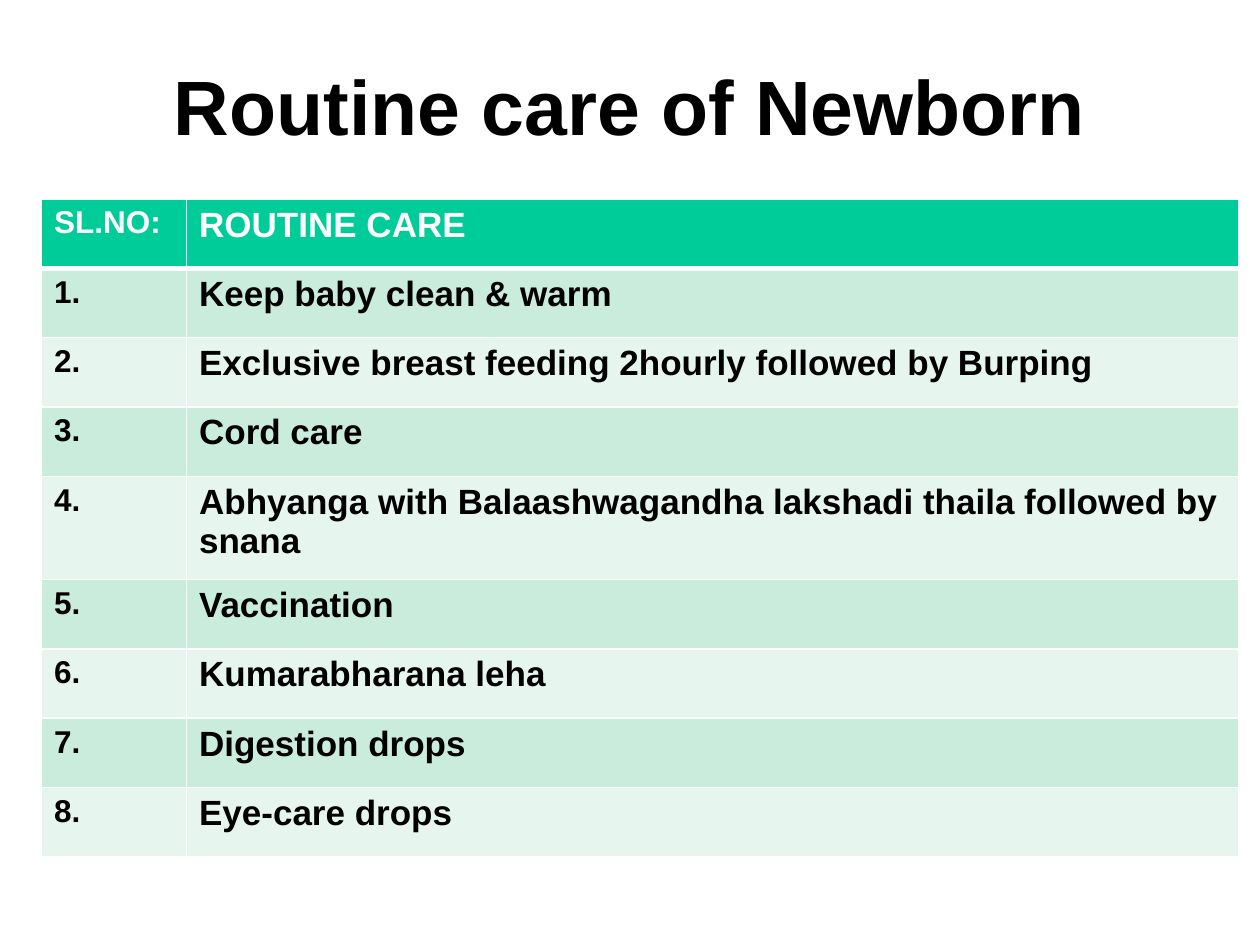
from lxml import etree
from pptx import Presentation
from pptx.dml.color import RGBColor
from pptx.enum.text import MSO_ANCHOR, PP_ALIGN
from pptx.oxml.ns import qn
from pptx.util import Inches, Pt

CENTER = PP_ALIGN.CENTER
MIDDLE = MSO_ANCHOR.MIDDLE

SLIDE_W, SLIDE_H = 10, 7.5
FONT = "Arial"
WHITE, BLACK = "FFFFFF", "000000"
HEADER_GREEN = "00CC99"
BAND_GREENS = ("E6F6EF", "CAECDD")

HEADINGS = ("SL.NO:", "ROUTINE CARE")
CARE_STEPS = (
    "Keep baby clean & warm",
    "Exclusive breast feeding 2hourly followed by Burping",
    "Cord care",
    "Abhyanga with Balaashwagandha lakshadi thaila followed by snana",
    "Vaccination",
    "Kumarabharana leha",
    "Digestion drops",
    "Eye-care drops",
)
TWO_LINE_ROW = 4
ROW_H, TWO_LINE_H = 0.55, 0.82
NUMBER_COL_W = 1.15
COLUMN_SIZES = (18, 20)


def color(hex_value):
    return RGBColor.from_string(hex_value)


def write(frame, text, size, hex_value):
    frame.text = text
    font = frame.paragraphs[0].runs[0].font
    font.name, font.size, font.bold = FONT, Pt(size), True
    font.color.rgb = color(hex_value)


def set_borders(cell, top, bottom):
    """Draw white cell edges; top and bottom are widths in points."""
    properties = cell._tc.get_or_add_tcPr()
    for edge, width in (("L", 1), ("R", 1), ("T", top), ("B", bottom)):
        line = etree.SubElement(properties, qn(f"a:ln{edge}"), w=str(Pt(width)))
        fill = etree.SubElement(line, qn("a:solidFill"))
        etree.SubElement(fill, qn("a:srgbClr"), val=WHITE)


def add_title(slide, left, top, width, height):
    title = slide.shapes.add_textbox(*map(Inches, (left, top, width, height)))
    frame = title.text_frame
    frame.word_wrap = True
    frame.vertical_anchor = MIDDLE
    write(frame, "Routine care of Newborn", 44, BLACK)
    frame.paragraphs[0].alignment = CENTER


def add_care_table(slide, left, top, width):
    rows = [HEADINGS] + [(f"{n}.", step) for n, step in enumerate(CARE_STEPS, 1)]
    heights = [TWO_LINE_H if r == TWO_LINE_ROW else ROW_H for r in range(len(rows))]
    box = map(Inches, (left, top, width, sum(heights)))
    table = slide.shapes.add_table(len(rows), len(HEADINGS), *box).table
    for column, column_w in zip(table.columns, (NUMBER_COL_W, width - NUMBER_COL_W)):
        column.width = Inches(column_w)

    for r, entries in enumerate(rows):
        table.rows[r].height = Inches(heights[r])
        is_header = r == 0
        for c, entry in enumerate(entries):
            cell = table.cell(r, c)
            write(cell.text_frame, entry, COLUMN_SIZES[c], WHITE if is_header else BLACK)
            set_borders(cell, top=3 if r == 1 else 1, bottom=3 if is_header else 1)
            cell.fill.solid()
            cell.fill.fore_color.rgb = color(HEADER_GREEN if is_header else BAND_GREENS[r % 2])


def main():
    deck = Presentation()
    deck.slide_width, deck.slide_height = Inches(SLIDE_W), Inches(SLIDE_H)
    slide = deck.slides.add_slide(deck.slide_layouts[6])
    add_title(slide, 0.075 * SLIDE_W, 0.33, 0.85 * SLIDE_W, 1)
    add_care_table(slide, 0.33, 1.58, 0.95 * SLIDE_W)
    deck.save("out.pptx")


if __name__ == "__main__":
    main()
